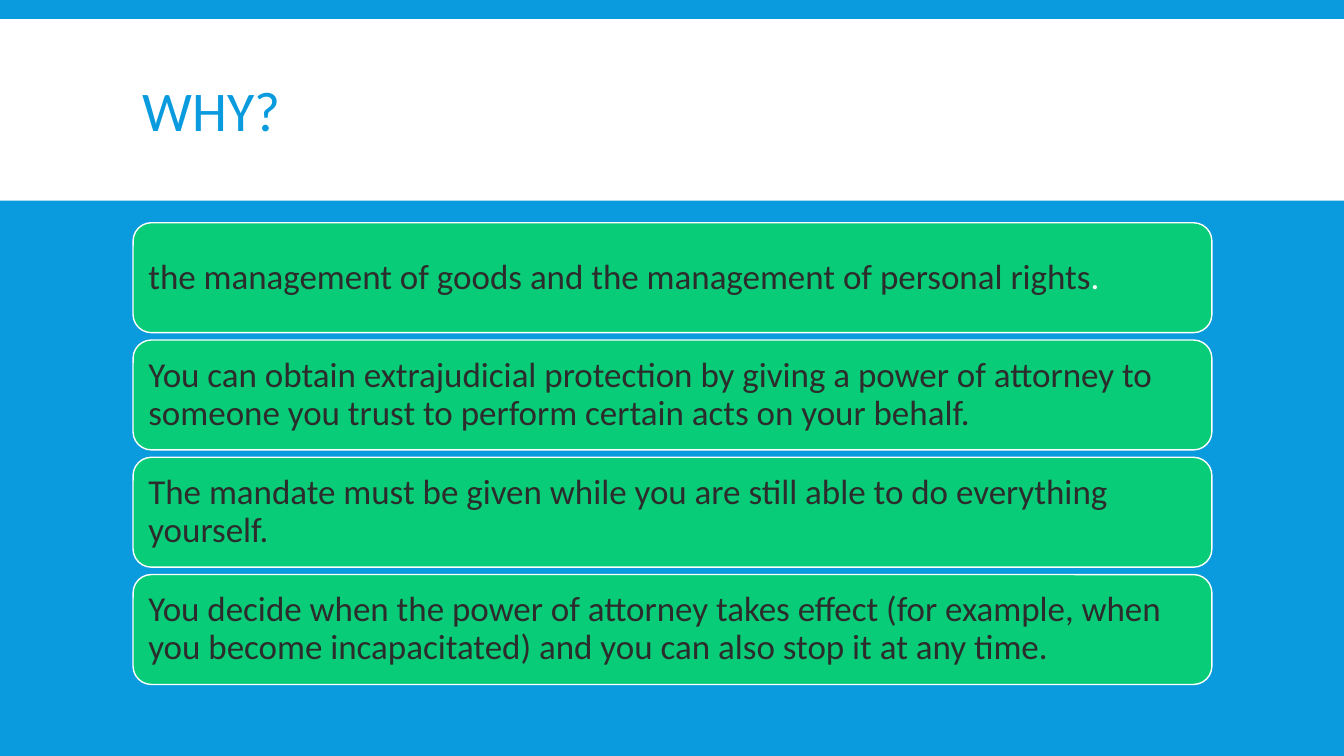
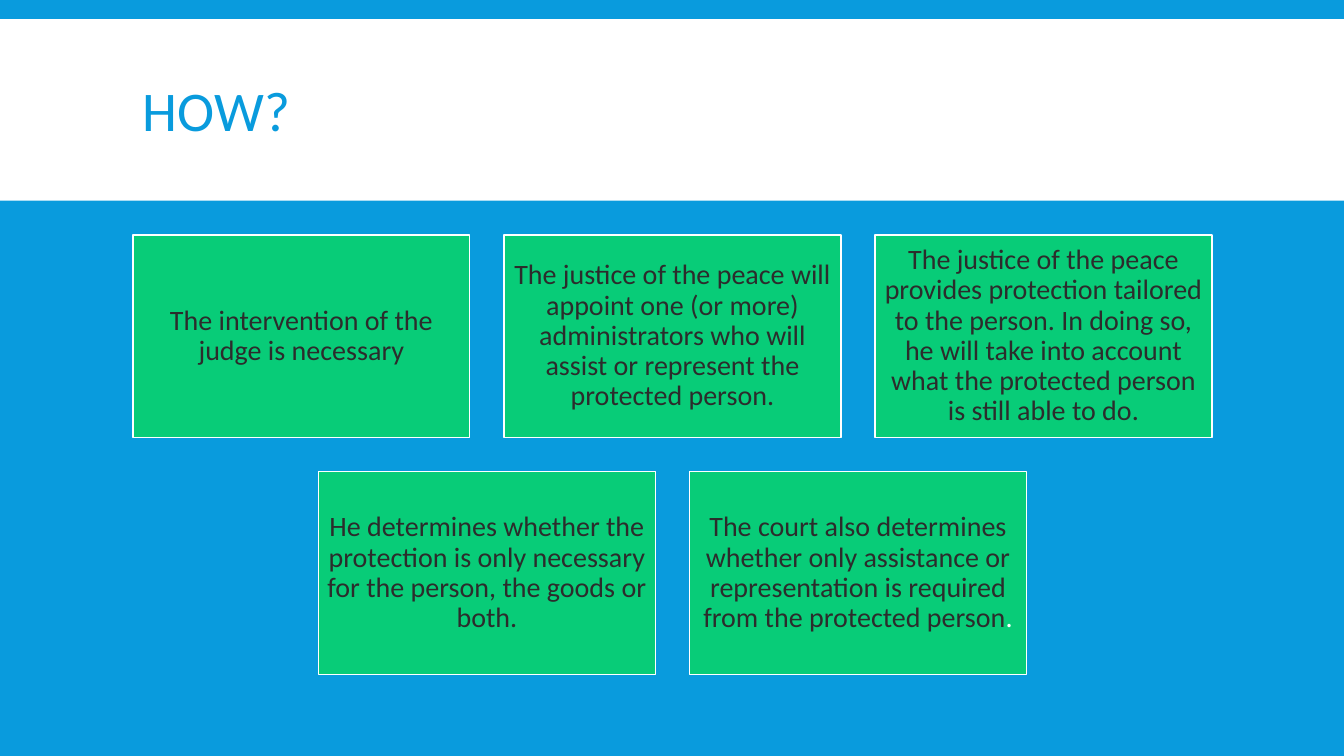
"""Build two slides on protection by mandate: why and how."""
import pptx
import pptx.dml.color
import pptx.enum.shapes
import pptx.enum.text
import pptx.util

Inches = pptx.util.Inches
MSO_SHAPE = pptx.enum.shapes.MSO_SHAPE
PP_ALIGN = pptx.enum.text.PP_ALIGN
BLUE = pptx.dml.color.RGBColor(0x09, 0x9B, 0xDD)
GREEN = pptx.dml.color.RGBColor(0x08, 0xCC, 0x78)
WHITE = pptx.dml.color.RGBColor(0xFF, 0xFF, 0xFF)
DARK = pptx.dml.color.RGBColor(0x2C, 0x2C, 0x2C)
FONT = "Calibri"
LEFT, WIDTH = 1.32, 10.7

REASONS = [
    ["the management of goods and the management of personal rights", "."],
    ["You can obtain extrajudicial protection by giving a power of attorney to "
     "someone you trust to perform certain acts on your behalf."],
    ["The mandate must be given while you are still able to do everything yourself."],
    ["You decide when the power of attorney takes effect (for example, when you "
     "become incapacitated) and you can also stop it at any time."],
]
STEP_ROWS = [
    [
        ["The intervention of the judge is necessary"],
        ["The justice of the peace will appoint one (or more) administrators who "
         "will assist or represent the protected person."],
        ["The justice of the peace provides protection tailored to the person. In "
         "doing so, he will take into account what the protected person is still "
         "able to do."],
    ],
    [
        ["He determines whether the protection is only necessary for the person, "
         "the goods or both."],
        ["The court also determines whether only assistance or representation is "
         "required from the protected person", "."],
    ],
]


def add_titled_slide(title):
    slide = presentation.slides.add_slide(presentation.slide_layouts[6])
    band = slide.shapes.add_shape(
        MSO_SHAPE.RECTANGLE, 0, Inches(0.19), presentation.slide_width, Inches(1.8))
    band.shadow.inherit = False
    band.fill.solid()
    band.fill.fore_color.rgb = WHITE
    band.line.fill.background()
    title_box = slide.shapes.add_textbox(
        Inches(LEFT), Inches(0.31), Inches(WIDTH), Inches(1.65))
    text_frame = title_box.text_frame
    text_frame.word_wrap = True
    text_frame.vertical_anchor = pptx.enum.text.MSO_ANCHOR.MIDDLE
    text_frame.text = title
    paragraph = text_frame.paragraphs[0]
    paragraph.line_spacing = 0.85
    font = paragraph.runs[0].font
    font.name, font.size, font.color.rgb = FONT, pptx.util.Pt(40), BLUE
    return slide


def add_card(slide, kind, left, top, width, height, texts, size, alignment, inset):
    card = slide.shapes.add_shape(
        kind, Inches(left), Inches(top), Inches(width), Inches(height))
    card.shadow.inherit = False
    card.fill.solid()
    card.fill.fore_color.rgb = GREEN
    card.line.color.rgb = WHITE
    card.line.width = pptx.util.Pt(1)
    text_frame = card.text_frame
    text_frame.word_wrap = True
    text_frame.vertical_anchor = pptx.enum.text.MSO_ANCHOR.MIDDLE
    text_frame.margin_left = text_frame.margin_right = Inches(inset)
    text_frame.margin_top = text_frame.margin_bottom = Inches(inset)
    paragraph = text_frame.paragraphs[0]
    paragraph.alignment = alignment
    paragraph.line_spacing = 0.9
    for text, color in zip(texts, (DARK, WHITE)):
        run = paragraph.add_run()
        run.text = text
        run.font.name, run.font.size = FONT, pptx.util.Pt(size)
        run.font.color.rgb = color


presentation = pptx.Presentation()
presentation.slide_width = Inches(13.33)
presentation.slide_height = Inches(7.5)
background = presentation.slide_master.background.fill
background.solid()
background.fore_color.rgb = BLUE

why_slide = add_titled_slide("WHY?")
first_top, last_top = 2.21, 5.7
reason_pitch = (last_top - first_top) / (len(REASONS) - 1)
for index, reason in enumerate(REASONS):
    add_card(why_slide, MSO_SHAPE.ROUNDED_RECTANGLE, LEFT,
             first_top + index * reason_pitch, WIDTH, 1.09,
             reason, 25, PP_ALIGN.LEFT, 0.1)

how_slide = add_titled_slide("HOW?")
step_width, step_height = 3.34, 2.01
gap = (WIDTH - 3 * step_width) / 2
for row_index, row in enumerate(STEP_ROWS):
    row_width = len(row) * (step_width + gap) - gap
    row_left = LEFT + (WIDTH - row_width) / 2
    for column_index, step in enumerate(row):
        add_card(how_slide, MSO_SHAPE.RECTANGLE,
                 row_left + column_index * (step_width + gap),
                 2.33 + row_index * (step_height + gap), step_width, step_height,
                 step, 20, PP_ALIGN.CENTER, 0.08)

presentation.save("out.pptx")
